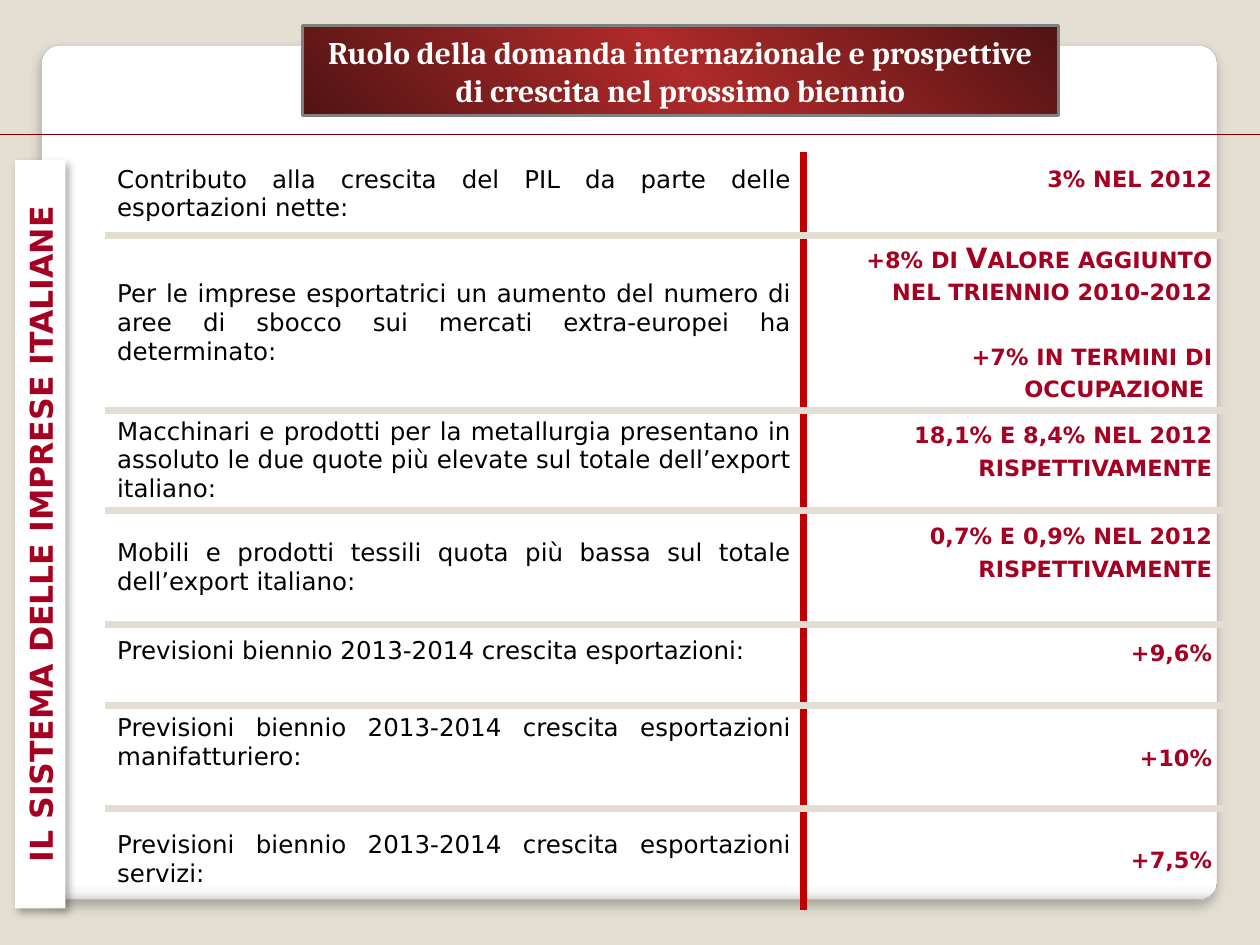
from lxml import etree
from pptx import Presentation
from pptx.dml.color import RGBColor
from pptx.enum.shapes import MSO_CONNECTOR, MSO_SHAPE
from pptx.enum.text import MSO_ANCHOR, MSO_AUTO_SIZE, PP_ALIGN
from pptx.oxml.ns import qn
from pptx.util import Inches, Pt

CENTER, JUSTIFY, RIGHT = PP_ALIGN.CENTER, PP_ALIGN.JUSTIFY, PP_ALIGN.RIGHT
MIDDLE = MSO_ANCHOR.MIDDLE
TITLE_ONLY = 5
BEIGE, RED, CRIMSON = "E3DED1", "C00000", "A50021"
BORDER_WIDTH = 4.5
COLUMN_WIDTHS = (5.55, 3.34)

TITLE = ["Ruolo della domanda internazionale e prospettive",
         "di crescita nel prossimo biennio"]

# Row height, description, its extra bottom margin, figures, their extra bottom margin
ROWS = [
    (0.66, "Contributo alla crescita del PIL da parte delle esportazioni nette:", 0,
     ["3% nel 2012"], 0.26),
    (1.39, "Per le imprese esportatrici un aumento del numero di aree di sbocco "
           "sui mercati extra-europei ha determinato:", 0,
     ["+8% di Valore aggiunto nel triennio 2010-2012", "+7% in termini di occupazione "], 0),
    (0.79, "Macchinari e prodotti per la metallurgia presentano in assoluto le due quote "
           "più elevate sul totale dell’export italiano:", 0,
     ["18,1% e 8,4% nel 2012 rispettivamente"], 0.16),
    (0.91, "Mobili e prodotti tessili quota più bassa sul totale dell’export italiano:", 0,
     ["0,7% e 0,9% nel 2012 rispettivamente"], 0.26),
    (0.64, "Previsioni biennio 2013-2014 crescita esportazioni:", 0.23, ["+9,6%"], 0.22),
    (0.82, "Previsioni biennio 2013-2014 crescita esportazioni manifatturiero:", 0.23,
     ["+10%"], 0),
    (0.80, "Previsioni biennio 2013-2014 crescita esportazioni servizi:", 0, ["+7,5%"], 0),
]


def color(value):
    return RGBColor.from_string(value)


def write_text(text_frame, lines, size=14, font="DejaVu Sans", ink="000000", bold=False,
               align=CENTER, small_caps=False, gap=0):
    """Write one paragraph per line, with gap points between paragraphs."""
    text_frame.word_wrap = True
    for index, line in enumerate(lines):
        paragraph = text_frame.add_paragraph() if index else text_frame.paragraphs[0]
        paragraph.alignment = align
        paragraph.space_before = Pt(gap if index else 0)
        run = paragraph.add_run()
        run.text = line
        run.font.size, run.font.name, run.font.bold = Pt(size), font, bold
        run.font.color.rgb = color(ink)
        if small_caps:
            run.font._element.set("cap", "small")


def fill_gradient(shape, stops, angle):
    """Fill with (percent, colour) stops; the angle runs counter-clockwise."""
    shape.fill.gradient()
    shape.fill.gradient_angle = angle
    stop_list = shape.element.spPr.find(".//" + qn("a:gsLst"))
    for stop in list(stop_list):
        stop_list.remove(stop)
    for percent, value in stops:
        stop = etree.SubElement(stop_list, qn("a:gs"), pos=str(percent * 1000))
        etree.SubElement(stop, qn("a:srgbClr"), val=value)


def set_shadow(shape, opacity, blur, distance, angle):
    shape.shadow.inherit = False
    effects = shape.element.spPr.find(qn("a:effectLst"))
    shadow = etree.SubElement(effects, qn("a:outerShdw"), blurRad=str(Pt(blur)),
                              dist=str(Pt(distance)), dir=str(angle * 60000),
                              algn="ctr", rotWithShape="0")
    black = etree.SubElement(shadow, qn("a:srgbClr"), val="000000")
    etree.SubElement(black, qn("a:alpha"), val=str(opacity * 1000))


def set_borders(cell, **sides):
    """Draw the sides given as L, R, T or B with a colour, and clear the others."""
    properties = cell._tc.get_or_add_tcPr()
    for side in "LRTB":
        line = etree.SubElement(properties, qn("a:ln" + side), w=str(Pt(BORDER_WIDTH)))
        if sides.get(side):
            fill = etree.SubElement(line, qn("a:solidFill"))
            etree.SubElement(fill, qn("a:srgbClr"), val=sides[side])
        else:
            etree.SubElement(line, qn("a:noFill"))


def add_panel(slide):
    panel = slide.shapes.add_shape(MSO_SHAPE.ROUNDED_RECTANGLE, Inches(0.33), Inches(0.36),
                                   Inches(9.33), Inches(6.78))
    panel.adjustments[0] = 0.021
    fill_gradient(panel, [(0, "FFFFFF"), (98, "FFFFFF"), (99, "F7F7F7"), (100, "DADADA")], 270)
    panel.line.color.rgb = color("A4A4A4")
    panel.line.width = Pt(0.16)
    set_shadow(panel, 25, 6, 4, 90)


def add_figures_table(slide):
    heights = [row[0] for row in ROWS]
    table = slide.shapes.add_table(len(ROWS), 2, Inches(0.83), Inches(1.21),
                                   Inches(sum(COLUMN_WIDTHS)), Inches(sum(heights))).table
    table.first_row = table.horz_banding = False
    for column, width in zip(table.columns, COLUMN_WIDTHS):
        column.width = Inches(width)
    for index, (height, description, lift, figures, figures_lift) in enumerate(ROWS):
        table.rows[index].height = Inches(height)
        left, right = table.cell(index, 0), table.cell(index, 1)
        top = BEIGE if index else None
        bottom = BEIGE if index < len(ROWS) - 1 else None
        set_borders(left, R=RED, T=top, B=bottom)
        set_borders(right, L=RED, T=top, B=bottom)
        for cell, extra in ((left, lift), (right, figures_lift)):
            cell.fill.background()
            cell.vertical_anchor = MIDDLE
            cell.margin_bottom = Inches(0.05 + extra)
        write_text(left.text_frame, [description], align=JUSTIFY)
        write_text(right.text_frame, figures, size=16, ink=CRIMSON, bold=True,
                   align=RIGHT, small_caps=True, gap=18.6)


def add_divider(slide):
    divider = slide.shapes.add_connector(MSO_CONNECTOR.STRAIGHT, Inches(0), Inches(1.07),
                                         Inches(10), Inches(1.07))
    divider.line.color.rgb = color("800000")
    divider.line.width = Pt(0.75)
    etree.SubElement(divider.element.spPr, qn("a:effectLst"))


def format_title(slide):
    title = slide.shapes.title
    title.left, title.top = Inches(2.4), Inches(0.2)
    title.width, title.height = Inches(6), Inches(0.72)
    fill_gradient(title, [(0, "511313"), (50, "AF2A2A"), (100, "511313")], 45)
    title.line.color.rgb = color("808080")
    title.line.width = Pt(1.75)
    title.text_frame.auto_size = MSO_AUTO_SIZE.NONE
    title.text_frame.vertical_anchor = MIDDLE
    write_text(title.text_frame, TITLE, size=18, font="Cambria", ink="FFFFFF", bold=True)
    # Bring the title in front of the panel
    title.element.getparent().append(title.element)


def add_side_label(slide):
    label = slide.shapes.add_shape(MSO_SHAPE.RECTANGLE, Inches(-2.65), Inches(4.04),
                                   Inches(5.94), Inches(0.4))
    label.rotation = 270
    label.fill.solid()
    label.fill.fore_color.rgb = color("FFFFFF")
    label.line.fill.background()
    set_shadow(label, 30, 4.5, 2.6, 53)
    label.text_frame.vertical_anchor = MIDDLE
    write_text(label.text_frame, ["IL SISTEMA DELLE IMPRESE ITALIANE"], size=18,
               ink=CRIMSON, bold=True)


def main():
    presentation = Presentation()
    presentation.slide_width, presentation.slide_height = Inches(10), Inches(7.5)
    slide = presentation.slides.add_slide(presentation.slide_layouts[TITLE_ONLY])
    slide.background.fill.solid()
    slide.background.fill.fore_color.rgb = color(BEIGE)
    add_panel(slide)
    add_figures_table(slide)
    add_divider(slide)
    format_title(slide)
    add_side_label(slide)
    presentation.save("out.pptx")


if __name__ == "__main__":
    main()
